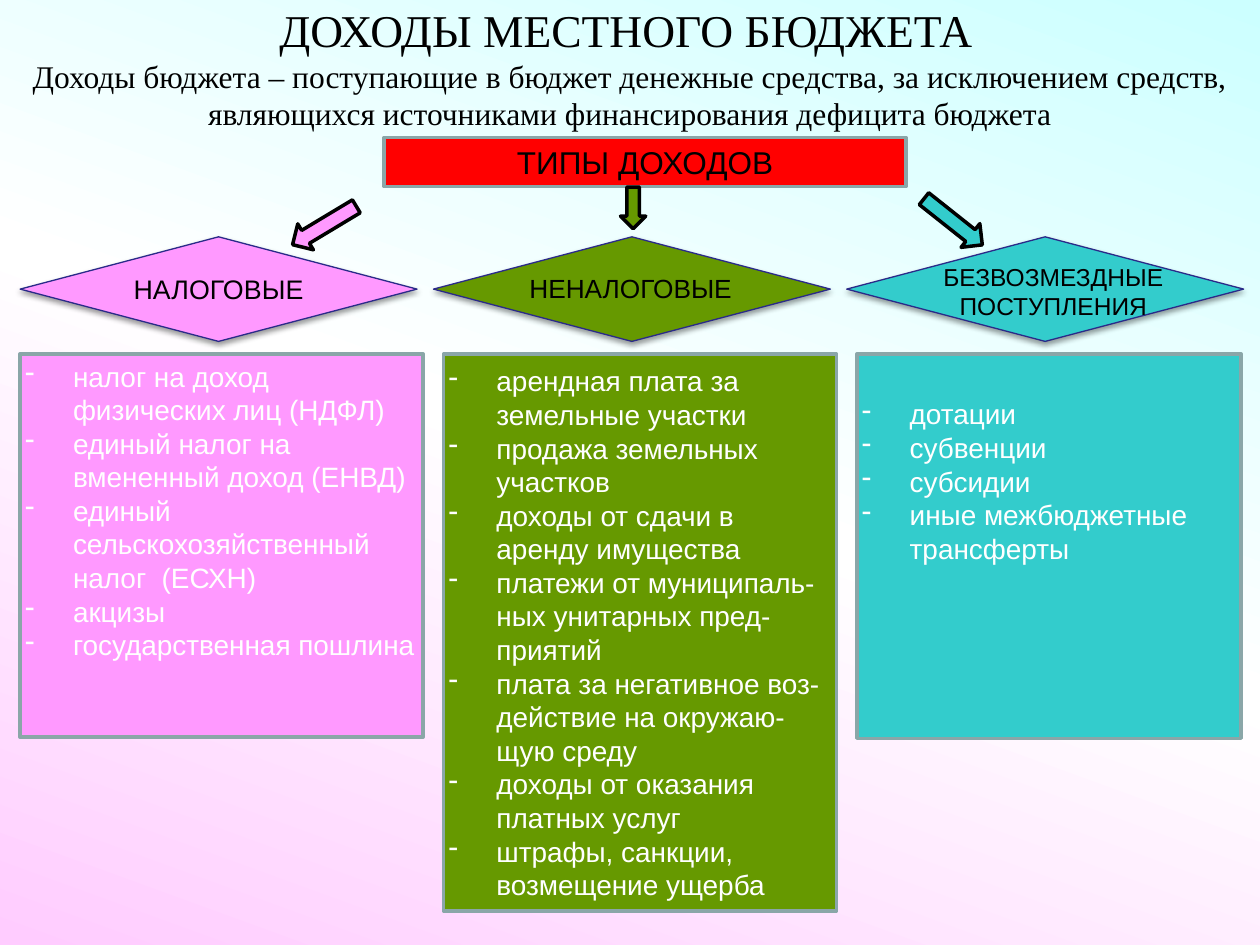
from copy import deepcopy
from dataclasses import dataclass
from typing import NamedTuple

from lxml import etree
from pptx import Presentation
from pptx import util as u
from pptx.dml.color import RGBColor
from pptx.enum import shapes, text
from pptx.oxml.ns import qn

GRID_COLUMNS, GRID_ROWS = 100, 75
SLIDE_WIDTH, SLIDE_HEIGHT = u.Inches(10), u.Inches(7.5)
MIDDLE, TOP = text.MSO_ANCHOR.MIDDLE, text.MSO_ANCHOR.TOP
SHAPE = shapes.MSO_SHAPE


@dataclass(frozen=True)
class Theme:
    serif: str = "Times New Roman"
    sans: str = "Arial"
    black: str = "000000"
    white: str = "FFFFFF"
    red: str = "FF0000"
    pink: str = "FF99FF"
    green: str = "669900"
    teal: str = "33CCCC"
    frame: str = "8AA6A8"
    diamond_line: str = "2A2A89"
    background: tuple = ("CCFFFF", "FFFFFF", "FFCCFF")
    title_size: float = 26
    heading_size: float = 18
    body_size: float = 16
    thick: float = 2
    thin: float = 0.75


THEME = Theme()


class Box(NamedTuple):
    left: float
    top: float
    width: float
    height: float

    def emu(self):
        column, row = SLIDE_WIDTH / GRID_COLUMNS, SLIDE_HEIGHT / GRID_ROWS
        return [round(value * unit) for value, unit in zip(self, (column, row) * 2)]


@dataclass(frozen=True)
class IncomeType:
    name: str
    name_size: float
    color: str
    items: tuple
    panel_shift: float
    panel_width: float
    panel_height: float
    label: Box = None
    anchor: int = TOP
    top_inset: float = 0.04


INCOME_TYPES = (
    IncomeType(
        "НАЛОГОВЫЕ", 15.3, THEME.pink,
        ("налог на доход физических лиц (НДФЛ)",
         "единый налог на вмененный доход (ЕНВД)",
         "единый сельскохозяйственный налог  (ЕСХН)",
         "акцизы",
         "государственная пошлина"),
        0, 32, 30.4),
    IncomeType(
        "НЕНАЛОГОВЫЕ", 15, THEME.green,
        ("арендная плата за земельные участки",
         "продажа земельных участков",
         "доходы от сдачи в аренду имущества",
         "платежи от муниципаль-ных унитарных пред-приятий",
         "плата за негативное воз-действие на окружаю-щую среду",
         "доходы от оказания платных услуг",
         "штрафы, санкции, возмещение ущерба"),
        0.8, 31.2, 44.2, Box(39.1, 21.1, 21.9, 3.5), MIDDLE),
    IncomeType(
        "БЕЗВОЗМЕЗДНЫЕ ПОСТУПЛЕНИЯ", 14, THEME.teal,
        ("дотации", "субвенции", "субсидии", "иные межбюджетные трансферты"),
        0.8, 30.5, 30.5, Box(71.9, 20.3, 23.4, 5.7), TOP, 0.34),
)


def add_figure(slide, kind, box, fill, line, line_width):
    shape = slide.shapes.add_shape(kind, *box.emu())
    shape.shadow.inherit = False
    shape.fill.solid()
    shape.fill.fore_color.rgb = RGBColor.from_string(fill)
    shape.line.color.rgb = RGBColor.from_string(line)
    shape.line.width = u.Pt(line_width)
    return shape


def style_paragraph(paragraph, font, size, color, alignment):
    paragraph.alignment = alignment
    paragraph.font.name = font
    paragraph.font.size = u.Pt(size)
    paragraph.font.color.rgb = RGBColor.from_string(color)


def set_insets(frame, inset, top=None):
    frame.margin_left = frame.margin_right = frame.margin_bottom = u.Inches(inset)
    frame.margin_top = u.Inches(inset if top is None else top)


def write_centered(shape, wording, size, font=THEME.sans, anchor=MIDDLE):
    frame = shape.text_frame
    frame.word_wrap = True
    frame.vertical_anchor = anchor
    frame.text = wording
    style_paragraph(frame.paragraphs[0], font, size, THEME.black, text.PP_ALIGN.CENTER)


def add_label(slide, box, wording, size, font=THEME.sans, anchor=TOP):
    write_centered(slide.shapes.add_textbox(*box.emu()), wording, size, font, anchor)


def add_dash(paragraph):
    properties = paragraph._p.get_or_add_pPr()
    properties.set("marL", str(u.Inches(0.38)))
    properties.set("indent", str(-u.Inches(0.38)))
    etree.SubElement(properties, qn("a:buChar")).set("char", "-")


def add_soft_shadow(shape):
    effects = shape._element.spPr.find(qn("a:effectLst"))
    shadow = etree.SubElement(effects, qn("a:outerShdw"), blurRad="40000",
                              dist="20000", dir="5400000", rotWithShape="0")
    color = etree.SubElement(shadow, qn("a:srgbClr"), val=THEME.black)
    etree.SubElement(color, qn("a:alpha"), val="38000")


def paint_background(slide):
    fill = slide.background.fill
    fill.gradient()
    fill.gradient_angle = 250
    stop_list = slide.element.xpath(".//a:gsLst")[0]
    stop_list.append(deepcopy(stop_list[-1]))
    for index, (stop, color) in enumerate(zip(fill.gradient_stops, THEME.background)):
        stop.color.rgb = RGBColor.from_string(color)
        stop.position = index / 2


def place_header(slide, box):
    add_label(slide, Box(box.left + 4.7, box.top, 90, 4.7), "ДОХОДЫ МЕСТНОГО БЮДЖЕТА",
              THEME.title_size, THEME.serif, MIDDLE)
    add_label(slide, Box(box.left, box.top + 4.7, box.width, 5.6),
              "Доходы бюджета – поступающие в бюджет денежные средства, за исключением "
              "средств, являющихся источниками финансирования дефицита бюджета",
              THEME.heading_size, THEME.serif, MIDDLE)


def place_types_banner(slide, box):
    banner = add_figure(slide, SHAPE.RECTANGLE, box, THEME.red, THEME.frame, THEME.thick)
    write_centered(banner, "ТИПЫ ДОХОДОВ", THEME.heading_size)


def place_arrows(slide, box):
    arrows = (
        (Box(0, 1.2, 5.9, 2.4), 329, THEME.pink),
        (Box(25.8, 0, 3.3, 2), 270, THEME.green),
        (Box(49.9, 0.9, 5.9, 2.4), 218.4, THEME.teal),
    )
    for offset, rotation, color in arrows:
        place = Box(box.left + offset.left, box.top + offset.top, offset.width, offset.height)
        arrow = add_figure(slide, SHAPE.LEFT_ARROW, place, color, THEME.black, THEME.thick)
        arrow.rotation = rotation


def place_income_type(slide, box, income):
    diamond = add_figure(slide, SHAPE.FLOWCHART_DECISION, Box(box.left, box.top, box.width, 8.3),
                         income.color, THEME.diamond_line, THEME.thin)
    add_soft_shadow(diamond)
    if income.label:
        add_label(slide, income.label, income.name, income.name_size)
    else:
        set_insets(diamond.text_frame, 0.04)
        write_centered(diamond, income.name, income.name_size)

    panel_box = Box(box.left + income.panel_shift, box.top + 9.3,
                    income.panel_width, income.panel_height)
    panel = add_figure(slide, SHAPE.RECTANGLE, panel_box, income.color, THEME.frame, THEME.thick)
    frame = panel.text_frame
    frame.word_wrap = True
    frame.vertical_anchor = income.anchor
    set_insets(frame, 0.04, income.top_inset)
    frame.text = "\n".join(income.items)
    for paragraph in frame.paragraphs:
        style_paragraph(paragraph, THEME.sans, THEME.body_size, THEME.white, text.PP_ALIGN.LEFT)
        add_dash(paragraph)


def main():
    presentation = Presentation()
    presentation.slide_width, presentation.slide_height = SLIDE_WIDTH, SLIDE_HEIGHT
    slide = presentation.slides.add_slide(presentation.slide_layouts[6])
    paint_background(slide)
    place_header(slide, Box(0, 0, GRID_COLUMNS, 10.3))
    place_types_banner(slide, Box(30.5, 10.9, 41.4, 3.9))
    for index, income in enumerate(INCOME_TYPES):
        place_income_type(slide, Box(1.6 + 32.8 * index, 18.8, 31.5, 53.5), income)
    place_arrows(slide, Box(22.8, 15.5, 55.8, 3.6))
    presentation.save("out.pptx")


if __name__ == "__main__":
    main()
